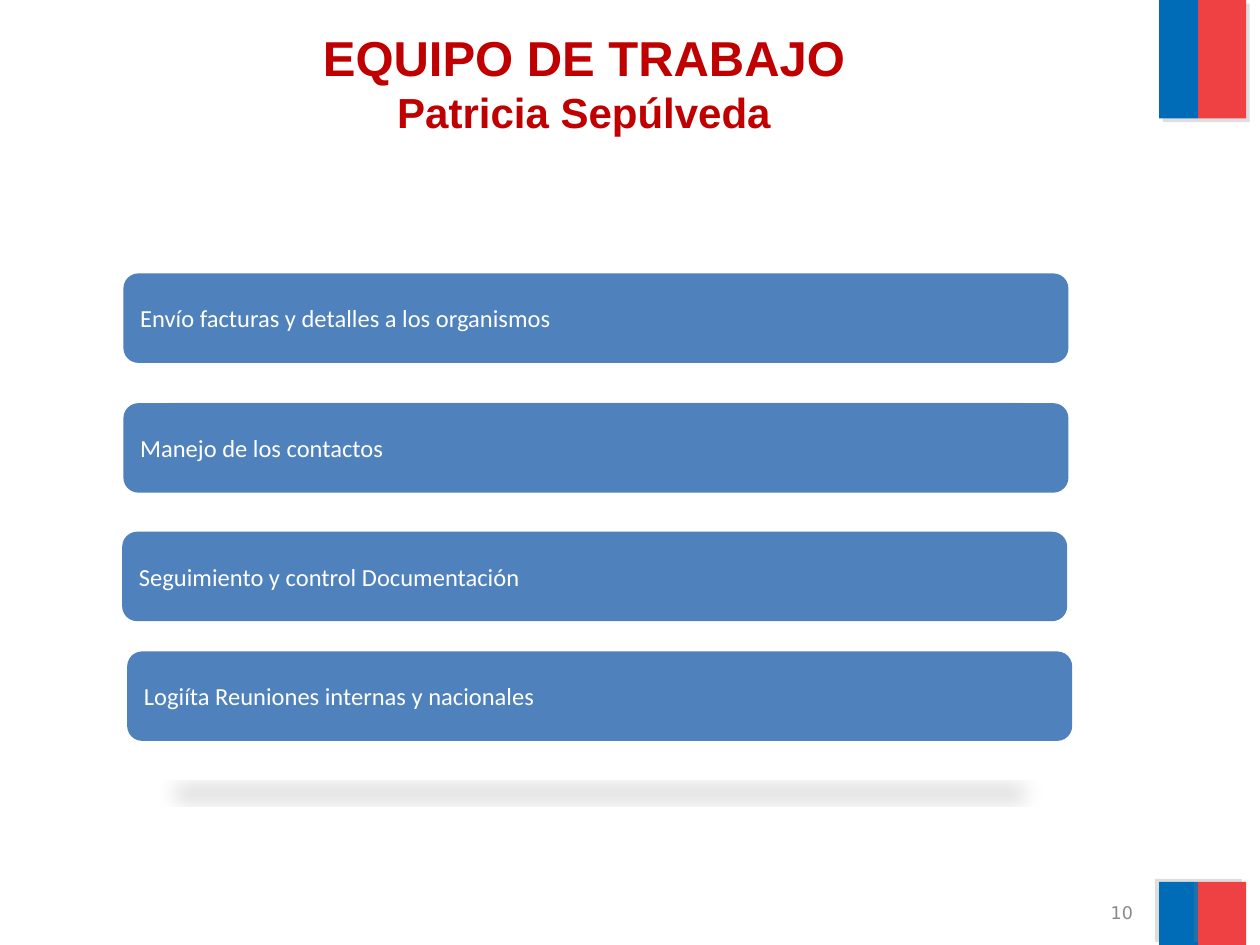
from lxml import etree
from pptx import Presentation, util as u
from pptx.dml.color import RGBColor
from pptx.enum import shapes, text
from pptx.oxml import ns

BLUE = RGBColor(0x00, 0x6C, 0xB7)
CORAL = RGBColor(0xEF, 0x41, 0x44)
RED = RGBColor(0xC0, 0x00, 0x00)
STEEL = RGBColor(0x4F, 0x81, 0xBD)
GREY = RGBColor(0x89, 0x89, 0x89)
WHITE = RGBColor(0xFF, 0xFF, 0xFF)
SHADE = RGBColor(0x80, 0x80, 0x80)
BLACK = RGBColor(0x00, 0x00, 0x00)


class Deck:
    """Holds the style and the current slide."""
    head, body, num = "Arial", "Calibri", "DejaVu Sans"

    def __init__(self, wide, high):
        self.prs = Presentation()
        self.prs.slide_width = u.Inches(wide)
        self.prs.slide_height = u.Inches(high)
        self.slide = self.prs.slides.add_slide(self.prs.slide_layouts[5])

    def font(self, para, name, color, size=None, bold=False):
        font = para.font
        font.name, font.bold = name, bold
        font.color.rgb = color
        if size:
            font.size = u.Pt(size)

    def shadow(self, shape, color, alpha, blur, dist, angle, **scale):
        shape.shadow.inherit = False
        effects = shape._element.spPr.find(ns.qn("a:effectLst"))
        outer = etree.SubElement(
            effects, ns.qn("a:outerShdw"), blurRad=str(u.Pt(blur)),
            dist=str(u.Pt(dist)), dir=str(angle * 60000), **scale,
            algn="ctr" if not scale else "b", rotWithShape="0")
        tint = etree.SubElement(outer, ns.qn("a:srgbClr"), val=str(color))
        etree.SubElement(tint, ns.qn("a:alpha"), val=str(alpha * 1000))

    def block(self, kind, box, color):
        shape = self.slide.shapes.add_shape(kind, *map(u.Inches, box))
        shape.fill.solid()
        shape.fill.fore_color.rgb = color
        shape.line.fill.background()
        return shape

    def stripe(self, box, color, angle):
        shape = self.block(shapes.MSO_SHAPE.RECTANGLE, box, color)
        self.shadow(shape, SHADE, 25, 0, 3, angle)

    def title(self, box, lines):
        shape = self.slide.shapes.title
        shape.left, shape.top, shape.width, shape.height = map(u.Inches, box)
        frame = shape.text_frame
        frame.auto_size = text.MSO_AUTO_SIZE.NONE
        frame.vertical_anchor = text.MSO_ANCHOR.TOP
        para = frame.paragraphs[0]
        para.alignment = text.PP_ALIGN.CENTER
        self.font(para, self.head, RED, bold=True)
        for i, (words, size) in enumerate(lines):
            if i:
                para.add_line_break()
            run = para.add_run()
            run.text = words
            run.font.size = u.Pt(size)

    def bar(self, box, words):
        shape = self.block(shapes.MSO_SHAPE.ROUNDED_RECTANGLE, box, STEEL)
        # Flattened shadow cast below the bar
        self.shadow(shape, BLACK, 15, 12, 25, 90, sx="90000", sy="-19000")
        frame = shape.text_frame
        frame.vertical_anchor = text.MSO_ANCHOR.MIDDLE
        para = frame.paragraphs[0]
        para.text = words
        para.alignment = text.PP_ALIGN.LEFT
        self.font(para, self.body, WHITE, 14)

    def number(self, box, words):
        frame = self.slide.shapes.add_textbox(*map(u.Inches, box)).text_frame
        frame.word_wrap = True
        frame.vertical_anchor = text.MSO_ANCHOR.MIDDLE
        para = frame.paragraphs[0]
        para.text = words
        para.alignment = text.PP_ALIGN.RIGHT
        self.font(para, self.num, GREY, 10)


def main():
    deck = Deck(10, 7.5)

    # Flag stripes in the right-hand corners
    for top, high, angle in ((0, 0.94, 45), (7, 0.5, 215)):
        deck.stripe((9.2, top, 0.31, high), BLUE, angle)
        deck.stripe((9.51, top, 0.38, high), CORAL, angle)

    # Title and page number
    deck.title((0.17, 0.17, 8.93, 1.25),
               (("EQUIPO DE TRABAJO", 28), ("Patricia Sepúlveda", 24)))
    deck.number((6.76, 7.14, 2.33, 0.21), "10")

    # Task bars
    for left, top, words in (
            (0.98, 2.17, "Envío facturas y detalles a los organismos"),
            (0.98, 3.2, "Manejo de los contactos"),
            (0.97, 4.22, "Seguimiento y control Documentación"),
            (1.01, 5.17, "Logiíta Reuniones internas y nacionales")):
        deck.bar((left, top, 7.5, 0.71), words)

    deck.prs.save("out.pptx")


if __name__ == "__main__":
    main()
